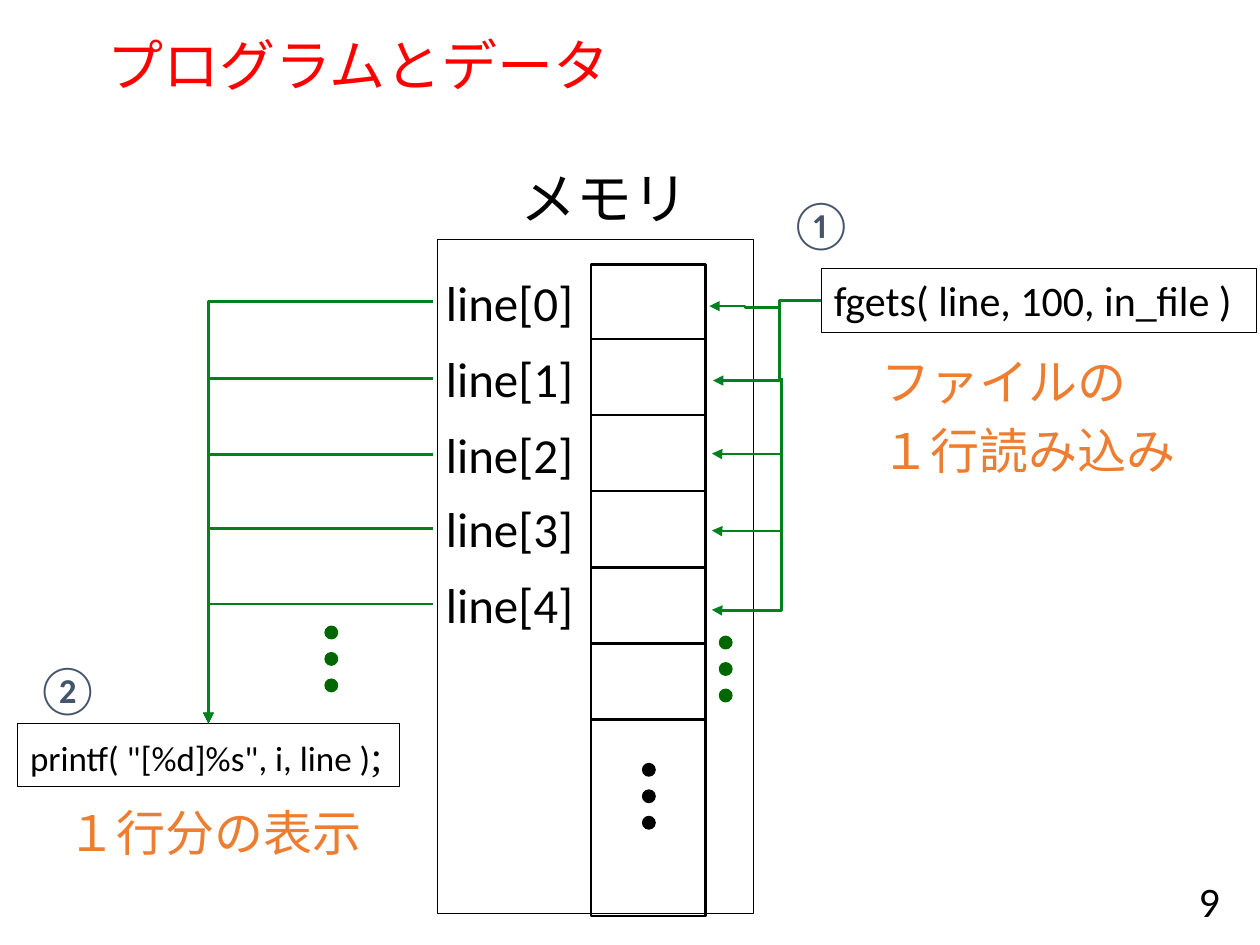
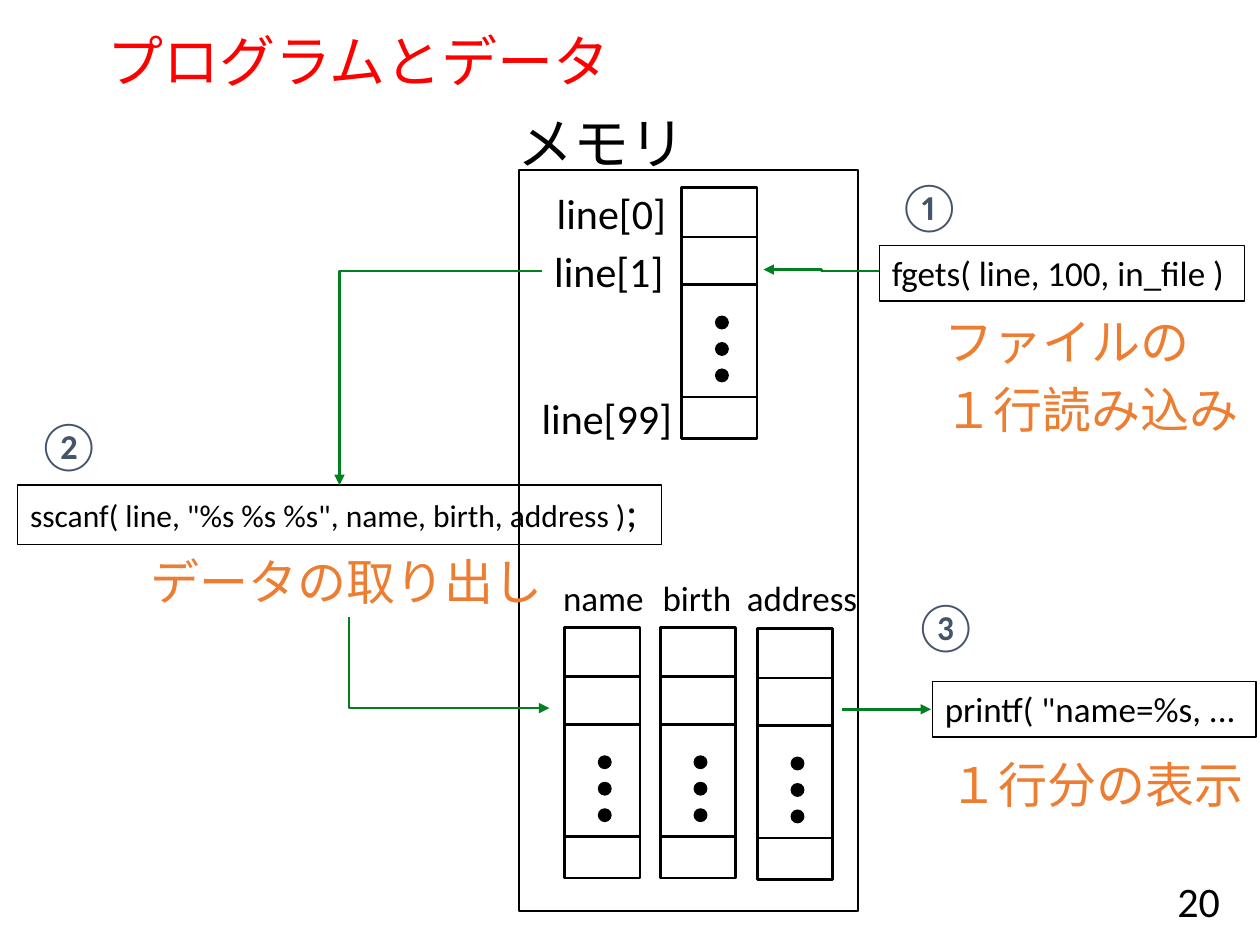
from dataclasses import dataclass
from typing import Optional

from lxml import etree
from pptx import Presentation
from pptx.dml.color import RGBColor
from pptx.enum import shapes, text
from pptx.oxml import ns
from pptx.util import Inches, Pt

BLACK, RED, SLATE, ORANGE = "000000", "FF0000", "44546A", "ED7D31"
ARROW_GREEN, DOT_GREEN = "00801E", "006600"
DOT_SIZE, DOT_STEP = 0.1, 0.21
TOP, LEFT, BOTTOM = 0, 1, 2  # connection sites of a rectangle
Point = tuple[float, float]


@dataclass
class Style:
    size: int
    color: str = BLACK
    font: str = "Calibri"


@dataclass
class Label:
    """Text at a place; boxed labels get a thin frame."""
    lines: str
    left: float
    top: float
    width: float
    height: float
    style: Style
    boxed: bool = False
    ending: str = ""
    ending_style: Optional[Style] = None
    spacing: Optional[float] = None


@dataclass
class Cells:
    """A column of memory cells with an ellipsis of dots."""
    left: float
    top: float
    width: float
    height: float
    dividers: list[float]
    dots: Point


TITLE = Style(32, RED, "Arial")
HEADING = Style(32)
STEP = Style(28, SLATE)
CAPTION = Style(28, ORANGE)
ELEMENT, SMALL_ELEMENT = Style(28), Style(24)
CODE, SMALL_CODE, TINY_CODE = Style(24), Style(20), Style(18)
NUMBER = Style(24)


# Formatting helpers
def rgb(color: str) -> RGBColor:
    return RGBColor.from_string(color)


def set_all(target, values: dict) -> None:
    for name, value in values.items():
        setattr(target, name, value)


def place(shape, left: float, top: float, width: float, height: float) -> None:
    set_all(shape, {"left": Inches(left), "top": Inches(top),
                    "width": Inches(width), "height": Inches(height)})


def write(paragraph, words: str, style: Style) -> None:
    run = paragraph.add_run()
    run.text = words
    set_all(run.font, {"size": Pt(style.size), "name": style.font, "bold": False})
    run.font.color.rgb = rgb(style.color)


# Drawing parts
def add_preset(slide, kind, box: tuple, line: str = BLACK,
               weight: float = 0.75, fill: Optional[str] = None):
    shape = slide.shapes.add_shape(kind, *map(Inches, box))
    shape.shadow.inherit = False
    shape.line.color.rgb = rgb(line)
    shape.line.width = Pt(weight)
    if fill:
        shape.fill.solid()
        shape.fill.fore_color.rgb = rgb(fill)
    else:
        shape.fill.background()
    return shape


def add_frame(slide, *box: float, weight: float = 0.75):
    return add_preset(slide, shapes.MSO_SHAPE.RECTANGLE, box, weight=weight)


def add_dots(slide, left: float, top: float, color: str = BLACK) -> None:
    for i in range(3):
        box = (left, top + i * DOT_STEP, DOT_SIZE, DOT_SIZE)
        add_preset(slide, shapes.MSO_SHAPE.OVAL, box, color, fill=color)


def add_line(slide, start: Point, end: Point, color: str = BLACK,
             kind=shapes.MSO_CONNECTOR.STRAIGHT, arrowhead: str = ""):
    line = slide.shapes.add_connector(kind, *map(Inches, start + end))
    line.line.color.rgb = rgb(color)
    line.line.width = Pt(1.5)
    if arrowhead:
        etree.SubElement(line.line._get_or_add_ln(), ns.qn(arrowhead), type="triangle")
    etree.SubElement(line._element.spPr, ns.qn("a:effectLst"))
    return line


def add_elbow(slide, start: Point, end: Point, bend: float = 0.5,
              arrowhead: str = "a:tailEnd"):
    """Green arrow with two turns; bend is the place of the middle part."""
    elbow = add_line(slide, start, end, ARROW_GREEN,
                     shapes.MSO_CONNECTOR.ELBOW, arrowhead)
    guides = elbow._element.spPr.find(ns.qn("a:prstGeom")).get_or_add_avLst()
    etree.SubElement(guides, ns.qn("a:gd"), name="adj1",
                     fmla=f"val {round(bend * 100000)}")
    return elbow


def add_corner(slide, start: Point, end: Point, arrowhead: str = "a:tailEnd"):
    """Green arrow with one turn, first across and then up or down."""
    corner = add_line(slide, start, end, ARROW_GREEN,
                      shapes.MSO_CONNECTOR.ELBOW, arrowhead)
    corner._element.spPr.find(ns.qn("a:prstGeom")).set("prst", "bentConnector2")
    return corner


def add_drop(slide, start: Point, end: Point) -> None:
    """Green arrow that runs down and then left: an elbow on its side."""
    across, down = start[0] - end[0], end[1] - start[1]
    middle_x, middle_y = (start[0] + end[0]) / 2, (start[1] + end[1]) / 2
    left, top = middle_x - down / 2, middle_y - across / 2
    drop = add_elbow(slide, (left, top), (left + down, top + across), 1.007)
    drop._element.spPr.find(ns.qn("a:xfrm")).set("rot", str(90 * 60000))


def add_label(slide, label: Label):
    box = (label.left, label.top, label.width, label.height)
    shape = (add_frame(slide, *box) if label.boxed
             else slide.shapes.add_textbox(*map(Inches, box)))
    frame = shape.text_frame
    set_all(frame, {"word_wrap": False, "vertical_anchor": text.MSO_ANCHOR.TOP,
                    "auto_size": text.MSO_AUTO_SIZE.SHAPE_TO_FIT_TEXT})
    for i, words in enumerate(label.lines.split("\n")):
        paragraph = frame.add_paragraph() if i else frame.paragraphs[0]
        paragraph.alignment = text.PP_ALIGN.LEFT
        if i:
            paragraph.space_before = Pt(0.2 * label.style.size)
        if label.spacing:
            paragraph.line_spacing = label.spacing
        write(paragraph, words, label.style)
    if label.ending:
        write(paragraph, label.ending, label.ending_style or label.style)
    return shape


def add_cells(slide, cells: Cells) -> None:
    add_frame(slide, cells.left, cells.top, cells.width, cells.height, weight=1.5)
    for offset in cells.dividers:
        y = cells.top + offset
        add_line(slide, (cells.left, y), (cells.left + cells.width, y))
    add_dots(slide, cells.left + cells.dots[0], cells.top + cells.dots[1])


def start_slide(deck, title_top: float, number: str):
    slide = deck.slides.add_slide(deck.slide_layouts[5])
    title = slide.shapes.title
    place(title, 0.75, title_top, 8.5, 0.78)
    set_all(title.text_frame, {"vertical_anchor": text.MSO_ANCHOR.MIDDLE,
                               "word_wrap": True,
                               "auto_size": text.MSO_AUTO_SIZE.NONE})
    heading = title.text_frame.paragraphs[0]
    set_all(heading, {"alignment": text.PP_ALIGN.LEFT, "line_spacing": 0.9})
    write(heading, "プログラムとデータ", TITLE)

    footer = slide.shapes.add_textbox(*map(Inches, (7.53, 6.95, 2.25, 0.4)))
    set_all(footer.text_frame, {"vertical_anchor": text.MSO_ANCHOR.MIDDLE,
                                "word_wrap": True})
    footer.text_frame.paragraphs[0].alignment = text.PP_ALIGN.RIGHT
    write(footer.text_frame.paragraphs[0], number, NUMBER)
    return slide


def add_step(slide, mark: str, left: float, top: float) -> None:
    add_label(slide, Label(mark, left, top, 0.59, 0.57, STEP))


# Slide 9: every line is read, then printed
def build_read_and_print(deck) -> None:
    slide = start_slide(deck, 0.15, "9")
    add_frame(slide, 3.47, 1.9, 2.51, 5.35)
    row = 0.604
    add_cells(slide, Cells(4.69, 2.1, 0.91, 5.17,
                           [0.59 + i * row for i in range(6)], (0.41, 3.96)))
    add_dots(slide, 5.71, 5.05, DOT_GREEN)
    add_dots(slide, 2.58, 4.97, DOT_GREEN)

    for label in (
        Label("メモリ", 4.03, 1.25, 1.55, 0.64, HEADING),
        Label("ファイルの\n１行読み込み", 6.9, 2.74, 2.56, 1.14, CAPTION),
        Label("１行分の表示", 0.44, 6.32, 2.56, 0.57, CAPTION),
    ):
        add_label(slide, label)
    add_step(slide, "①", 6.16, 1.49)
    add_step(slide, "②", 0.18, 5.18)

    # Reading: from the call into each element
    fgets = add_label(slide, Label("fgets( line, 100, in_file )", 6.52, 2.13, 3.45, 0.51,
                                   CODE, True))
    add_elbow(slide, (6.2, 2.44), (5.63, 2.43))
    add_elbow(slide, (6.52, 2.38), (5.66, 3.02), 0.384).begin_connect(fgets, LEFT)
    for start_y, end_y in ((3.0, 3.6), (3.52, 4.21), (4.14, 4.84)):
        add_drop(slide, (6.2, start_y), (5.65, end_y))

    # Printing: from each element to the call
    printf = add_label(slide, Label('printf( "[%d]%s", i, line )', 0.14, 5.74, 3.03, 0.5,
                                    SMALL_CODE, True, ";",
                                    Style(24, font="Times New Roman")))
    for i, top in enumerate((2.11, 2.72, 3.32, 3.91, 4.51)):
        element = add_label(slide, Label(f"line[{i}]", 3.44, top, 1.24, 0.57, ELEMENT))
        arrow = add_corner(slide, (3.44, top + 0.28), (1.65, 5.74))
        arrow.begin_connect(element, LEFT)
        arrow.end_connect(printf, TOP)


# Slide 20: a line is read, split into fields, then printed
def build_split_fields(deck) -> None:
    slide = start_slide(deck, 0.12, "20")
    add_frame(slide, 4.12, 1.35, 2.69, 5.88)
    for left, top in ((5.41, 1.49), (4.48, 4.98), (5.24, 4.98), (6.01, 4.99)):
        add_cells(slide, Cells(left, top, 0.6, 1.99, [0.39, 0.77, 1.66], (0.27, 1.02)))

    for label in (
        Label("メモリ", 4.01, 0.81, 1.55, 0.64, HEADING),
        Label("line[0]", 4.32, 1.44, 1.09, 0.5, SMALL_ELEMENT),
        Label("line[99]", 4.2, 3.07, 1.26, 0.5, SMALL_ELEMENT),
        Label("name", 4.37, 4.53, 0.85, 0.44, SMALL_CODE),
        Label("birth", 5.16, 4.53, 0.75, 0.44, SMALL_CODE),
        Label("address", 5.83, 4.53, 1.09, 0.44, SMALL_CODE),
        Label("fgets( line, 100, in_file )", 6.98, 1.95, 2.9, 0.44, SMALL_CODE, True),
        Label("ファイルの\n１行読み込み", 7.4, 2.42, 2.56, 1.14, CAPTION),
        Label('printf( "name=%s, ...', 7.4, 5.41, 2.57, 0.44, SMALL_CODE, True),
        Label("１行分の表示", 7.44, 5.94, 2.56, 0.57, CAPTION),
    ):
        add_label(slide, label)
    for mark, left, top in (("①", 7.02, 1.34), ("②", 0.19, 3.24), ("③", 7.15, 4.68)):
        add_step(slide, mark, left, top)

    element = add_label(slide, Label("line[1]", 4.3, 1.9, 1.09, 0.5, SMALL_ELEMENT))
    sscanf = add_label(slide, Label('sscanf( line, "%s %s %s", name, birth, address )',
                                    0.14, 3.85, 5.11, 0.47, TINY_CODE, True,
                                    ";", CODE, 0.9))
    extraction = add_label(slide, Label("データの取り出し", 1.1, 4.33, 3.34, 0.57, CAPTION))

    # Flow of the data through the calls
    add_elbow(slide, (6.98, 2.15), (6.06, 2.14))
    scan = add_corner(slide, (4.3, 2.15), (2.69, 3.85))
    scan.begin_connect(element, LEFT)
    scan.end_connect(sscanf, TOP)
    store = add_corner(slide, (4.36, 5.62), (2.77, 4.9), "a:headEnd")
    store.end_connect(extraction, BOTTOM)
    add_elbow(slide, (6.68, 5.63), (7.39, 5.63))


def main() -> None:
    deck = Presentation()
    set_all(deck, {"slide_width": Inches(10), "slide_height": Inches(7.5)})
    build_read_and_print(deck)
    build_split_fields(deck)
    deck.save("out.pptx")


if __name__ == "__main__":
    main()
